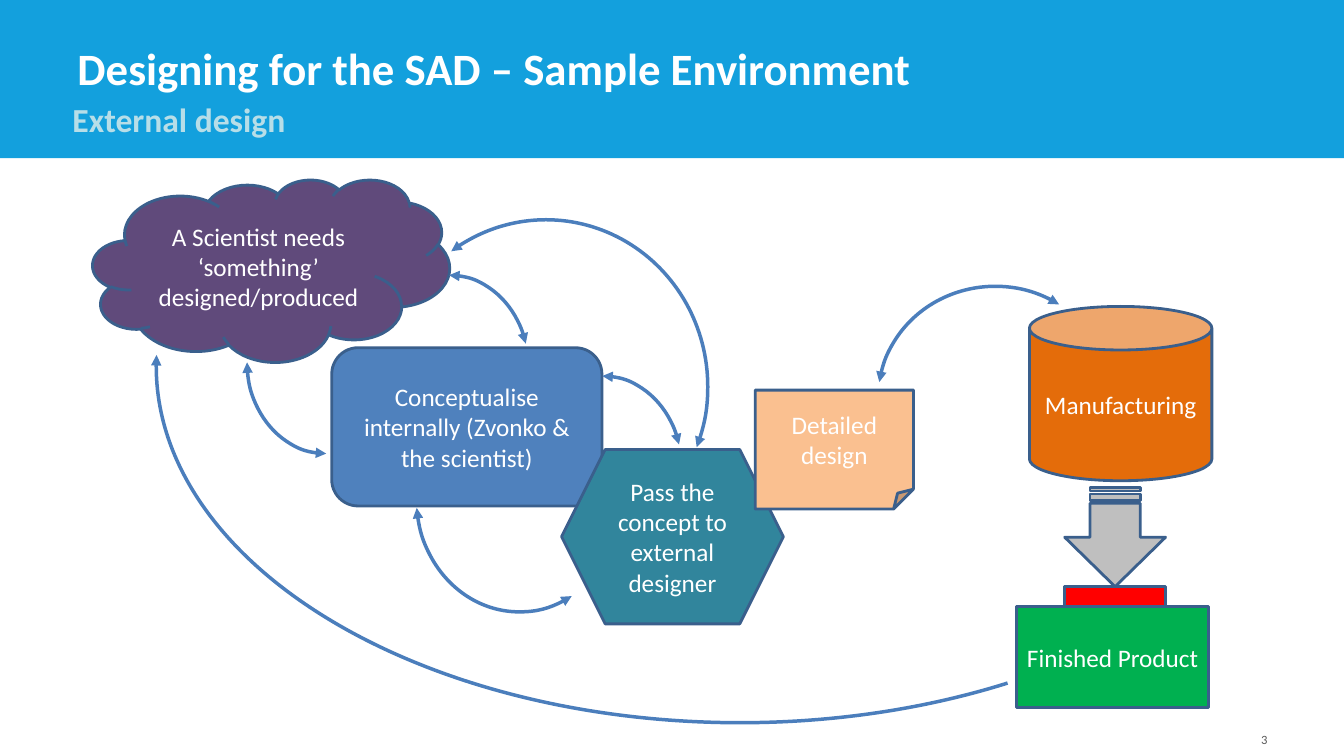
from dataclasses import dataclass

import pptx
import pptx.dml.color
import pptx.enum.shapes
import pptx.enum.text
import pptx.oxml
import pptx.oxml.ns
import pptx.util

Inches = pptx.util.Inches
Pt = pptx.util.Pt
Kind = pptx.enum.shapes.MSO_SHAPE
Align = pptx.enum.text.PP_ALIGN
Anchor = pptx.enum.text.MSO_ANCHOR
Bounds = tuple[float, float, float, float]


@dataclass(frozen=True)
class Theme:
    font: str = "Calibri"
    white: str = "FFFFFF"
    banner: str = "13A0DD"
    subtitle: str = "B7DEE8"
    number: str = "595959"
    outline: str = "3A5F8C"
    arrow: str = "4B7EBC"
    purple: str = "604A7B"
    blue: str = "4F81BD"
    teal: str = "31859C"
    peach: str = "FAC090"
    orange: str = "E46C0A"
    grey: str = "BFBFBF"
    green: str = "00B050"
    red: str = "FF0000"
    title_size: int = 32
    subtitle_size: int = 24
    body_size: int = 18
    number_size: int = 9
    outline_width: float = 2
    arrow_width: float = 2.5


THEME = Theme()


@dataclass(frozen=True)
class Label:
    bounds: Bounds
    text: str
    size: int
    color: str
    bold: bool = False
    align: Align = Align.LEFT


@dataclass(frozen=True)
class Block:
    bounds: Bounds
    kind: Kind
    fill: str
    text: str = ""
    rotation: float = 0
    outlined: bool = True


@dataclass(frozen=True)
class CurvedArrow:
    bounds: Bounds
    start: float = 162
    end: float = 0
    rotation: float = 0
    ends: tuple[str, ...] = ("headEnd", "tailEnd")


BANNER = Block((0, 0, 13.33, 1.57), Kind.RECTANGLE, THEME.banner, outlined=False)

LABELS = [
    Label((0.67, 0.38, 10.41, 0.61), "Designing for the SAD – Sample Environment",
          THEME.title_size, THEME.white, bold=True),
    Label((0.62, 0.82, 2.89, 0.61), "External design",
          THEME.subtitle_size, THEME.subtitle, bold=True),
    Label((9.56, 7.06, 3.11, 0.4), "3", THEME.number_size, THEME.number,
          align=Align.RIGHT),
]

BLOCKS = [
    Block((0.92, 1.78, 3.54, 1.81), Kind.CLOUD, THEME.purple,
          "A Scientist needs ‘something’ designed/produced"),
    Block((3.29, 3.45, 2.68, 1.57), Kind.ROUNDED_RECTANGLE, THEME.blue,
          "Conceptualise internally (Zvonko & the scientist)"),
    Block((5.57, 4.46, 2.2, 1.73), Kind.HEXAGON, THEME.teal,
          "Pass the concept to external designer"),
    Block((7.49, 3.87, 1.57, 1.18), Kind.FOLDED_CORNER, THEME.peach, "Detailed design"),
    Block((10.21, 3.04, 1.81, 1.73), Kind.CAN, THEME.orange, "Manufacturing"),
    Block((10.57, 4.83, 0.98, 1), Kind.STRIPED_RIGHT_ARROW, THEME.grey, rotation=90),
    Block((10.08, 6.02, 1.91, 1), Kind.RECTANGLE, THEME.green, "Finished Product"),
    Block((10.56, 5.82, 1, 0.2), Kind.RECTANGLE, THEME.red),
]

ARROWS = [
    CurvedArrow((3.67, 2.73, 1.57, 1.81), end=206.05),
    CurvedArrow((2.45, 2.69, 1.57, 1.81), rotation=180),
    CurvedArrow((3.81, 2.18, 3.21, 3.31), 141, 13.15),
    CurvedArrow((4.13, 3.83, 2.04, 2.24), 144.99, 213, rotation=180),
    CurvedArrow((8.71, 2.84, 2.32, 2.21), 112.62, 182.67),
    CurvedArrow((1.55, 0.1, 11.58, 7.07), 29.89, 108.67, ends=("tailEnd",)),
    CurvedArrow((5.19, 3.73, 1.57, 1.81), end=206.05),
]


def rgb(color: str) -> pptx.dml.color.RGBColor:
    return pptx.dml.color.RGBColor.from_string(color)


def write(shape, text: str, size: int, color: str, anchor: Anchor,
          align: Align, bold: bool = False) -> None:
    frame = shape.text_frame
    frame.word_wrap = True
    frame.vertical_anchor = anchor
    para = frame.paragraphs[0]
    para.text = text
    para.alignment = align
    para.font.name = THEME.font
    para.font.size = Pt(size)
    para.font.bold = bold
    para.font.color.rgb = rgb(color)


def draw_label(page, label: Label) -> None:
    box = page.shapes.add_textbox(*map(Inches, label.bounds))
    write(box, label.text, label.size, label.color, Anchor.BOTTOM,
          label.align, label.bold)


def add_plain_shape(page, kind: Kind, bounds: Bounds, rotation: float):
    shape = page.shapes.add_shape(kind, *map(Inches, bounds))
    shape.shadow.inherit = False
    shape.rotation = rotation
    return shape


def draw_block(page, block: Block) -> None:
    shape = add_plain_shape(page, block.kind, block.bounds, block.rotation)
    shape.fill.solid()
    shape.fill.fore_color.rgb = rgb(block.fill)
    if block.outlined:
        shape.line.color.rgb = rgb(THEME.outline)
        shape.line.width = Pt(THEME.outline_width)
    else:
        shape.line.fill.background()
    if block.text:
        write(shape, block.text, THEME.body_size, THEME.white,
              Anchor.MIDDLE, Align.CENTER)


def draw_arrow(page, arrow: CurvedArrow) -> None:
    shape = add_plain_shape(page, Kind.ARC, arrow.bounds, arrow.rotation)
    shape.adjustments[0] = arrow.start
    shape.adjustments[1] = arrow.end
    shape.fill.background()
    shape.line.color.rgb = rgb(THEME.arrow)
    shape.line.width = Pt(THEME.arrow_width)
    outline = shape.line._get_or_add_ln()
    for end in arrow.ends:
        namespace = pptx.oxml.ns.nsdecls("a")
        outline.append(pptx.oxml.parse_xml(f'<a:{end} {namespace} type="triangle"/>'))


def main() -> None:
    deck = pptx.Presentation()
    deck.slide_width = Inches(13.33)
    deck.slide_height = Inches(7.5)
    page = deck.slides.add_slide(deck.slide_layouts[6])
    for block in [BANNER, *BLOCKS]:
        draw_block(page, block)
    for arrow in ARROWS:
        draw_arrow(page, arrow)
    for label in LABELS:
        draw_label(page, label)
    deck.save("out.pptx")


if __name__ == "__main__":
    main()
